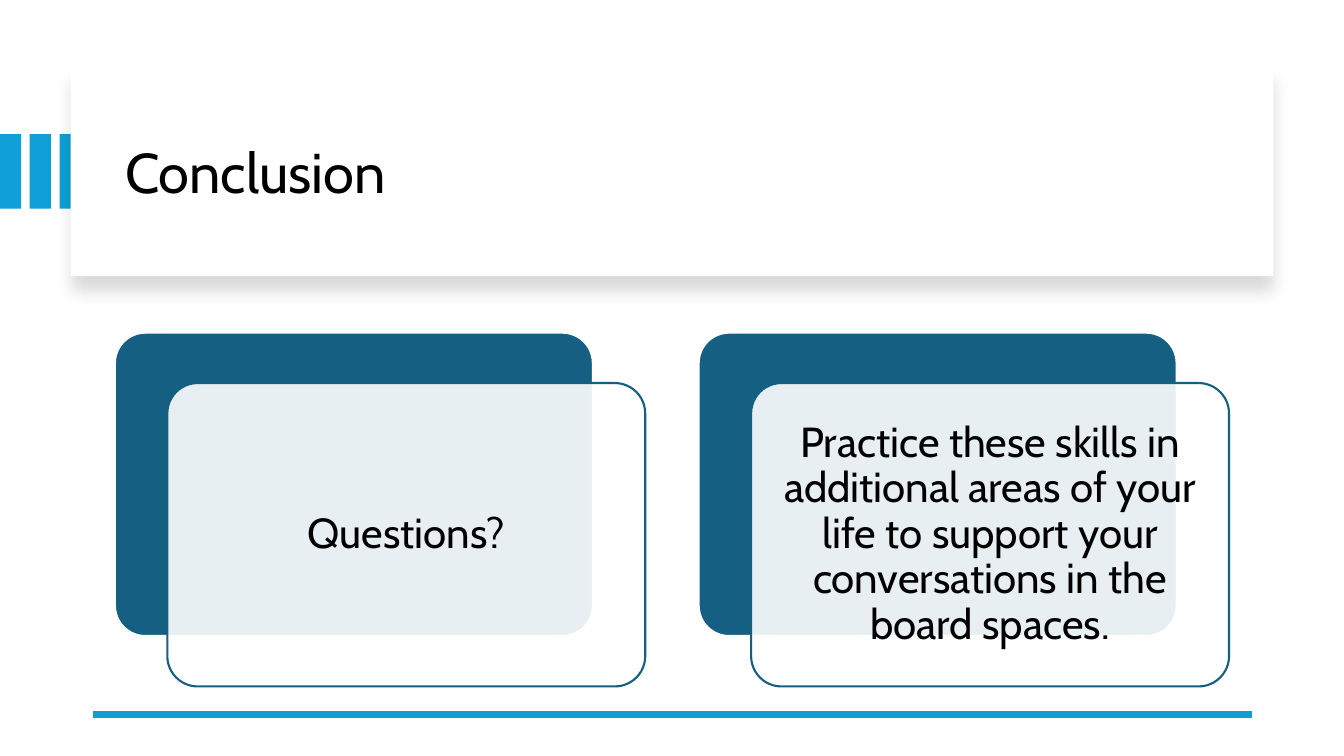
from lxml import etree
from pptx import Presentation
from pptx.dml.color import RGBColor
from pptx.enum.shapes import MSO_CONNECTOR, MSO_SHAPE
from pptx.enum.text import MSO_ANCHOR, PP_ALIGN
from pptx.oxml import parse_xml
from pptx.oxml.ns import nsdecls, qn
from pptx.util import Inches, Pt

RECT, ROUND = MSO_SHAPE.RECTANGLE, MSO_SHAPE.ROUNDED_RECTANGLE
STRAIGHT = MSO_CONNECTOR.STRAIGHT
MIDDLE = MSO_ANCHOR.MIDDLE
LEFT, CENTER = PP_ALIGN.LEFT, PP_ALIGN.CENTER

THEME = {
    "font": "Cabin", "title": 40, "body": 30,
    "text": RGBColor.from_string("000000"),
    "paper": RGBColor.from_string("FFFFFF"),
    "accent": RGBColor.from_string("0F9ED5"),
    "card": RGBColor.from_string("156082"),
}

prs = Presentation()
prs.slide_width, prs.slide_height = Inches(13.33), Inches(7.5)
s = prs.slides.add_slide(prs.slide_layouts[5])


def add_box(kind, x, y, w, h, fill, line=None):
    sp = s.shapes.add_shape(kind, Inches(x), Inches(y), Inches(w), Inches(h))
    sp.shadow.inherit = False
    sp.fill.solid()
    sp.fill.fore_color.rgb = fill
    if line is None:
        sp.line.fill.background()
    else:
        sp.line.color.rgb = line
        sp.line.width = Pt(1.5)
    if kind == ROUND:
        sp.adjustments[0] = 0.1
    return sp


def write(sp, text, size, align):
    tf = sp.text_frame
    tf.word_wrap = True
    tf.vertical_anchor = MIDDLE
    p = tf.paragraphs[0]
    p.alignment = align
    p.line_spacing = 0.9
    r = p.add_run()
    r.text = text
    r.font.name = THEME["font"]
    r.font.size = Pt(size)
    r.font.color.rgb = THEME["text"]
    return tf


# Accent bars at the left edge
for i in range(3):
    add_box(RECT, i * 0.295, 1.33, 0.21, 0.74, THEME["accent"])

# Title panel with a soft shadow below
panel = add_box(RECT, 0.7, 0.67, 11.93, 2.07, THEME["paper"])
panel._element.spPr.find(qn("a:effectLst")).append(parse_xml(
    f'<a:outerShdw {nsdecls("a")} blurRad="{Pt(11)}" dist="{Pt(10)}" '
    'dir="5400000" algn="t" rotWithShape="0"><a:srgbClr val="000000">'
    '<a:alpha val="15000"/></a:srgbClr></a:outerShdw>'))

# Title, brought in front of the panel
title = s.shapes.title
title.left, title.top = Inches(1.14), Inches(0.89)
title.width, title.height = Inches(11.13), Inches(1.7)
write(title, "Conclusion", THEME["title"], LEFT)
panel._element.addnext(title._element)

# Rule along the bottom
rule = s.shapes.add_connector(STRAIGHT, Inches(12.42), Inches(7.09),
                              Inches(0.92), Inches(7.09))
rule.line.color.rgb = THEME["accent"]
rule.line.width = Pt(4.5)
etree.SubElement(rule._element.spPr, qn("a:effectLst"))

# Cards: a solid back, a translucent front and its text
CARD_W, CARD_H, CARD_STEP, INSET = 4.74, 3.01, 5.79, 0.09
CARDS = [
    "Questions?",
    "Practice these skills in additional areas of your life to support "
    "your conversations in the board spaces.",
]
for i, text in enumerate(CARDS):
    x, y = 1.14 + i * CARD_STEP, 3.3
    add_box(ROUND, x, y, CARD_W, CARD_H, THEME["card"], THEME["paper"])
    x, y = x + 0.52, y + 0.5
    front = add_box(ROUND, x, y, CARD_W, CARD_H, THEME["paper"], THEME["card"])
    color = front._element.spPr.find(qn("a:solidFill")).find(qn("a:srgbClr"))
    etree.SubElement(color, qn("a:alpha"), val="90000")
    label = s.shapes.add_textbox(
        Inches(x + INSET), Inches(y + INSET),
        Inches(CARD_W - 2 * INSET), Inches(CARD_H - 2 * INSET))
    tf = write(label, text, THEME["body"], CENTER)
    tf.margin_left = tf.margin_right = Inches(0.12)
    tf.margin_top = tf.margin_bottom = Inches(0.12)

prs.save("out.pptx")
